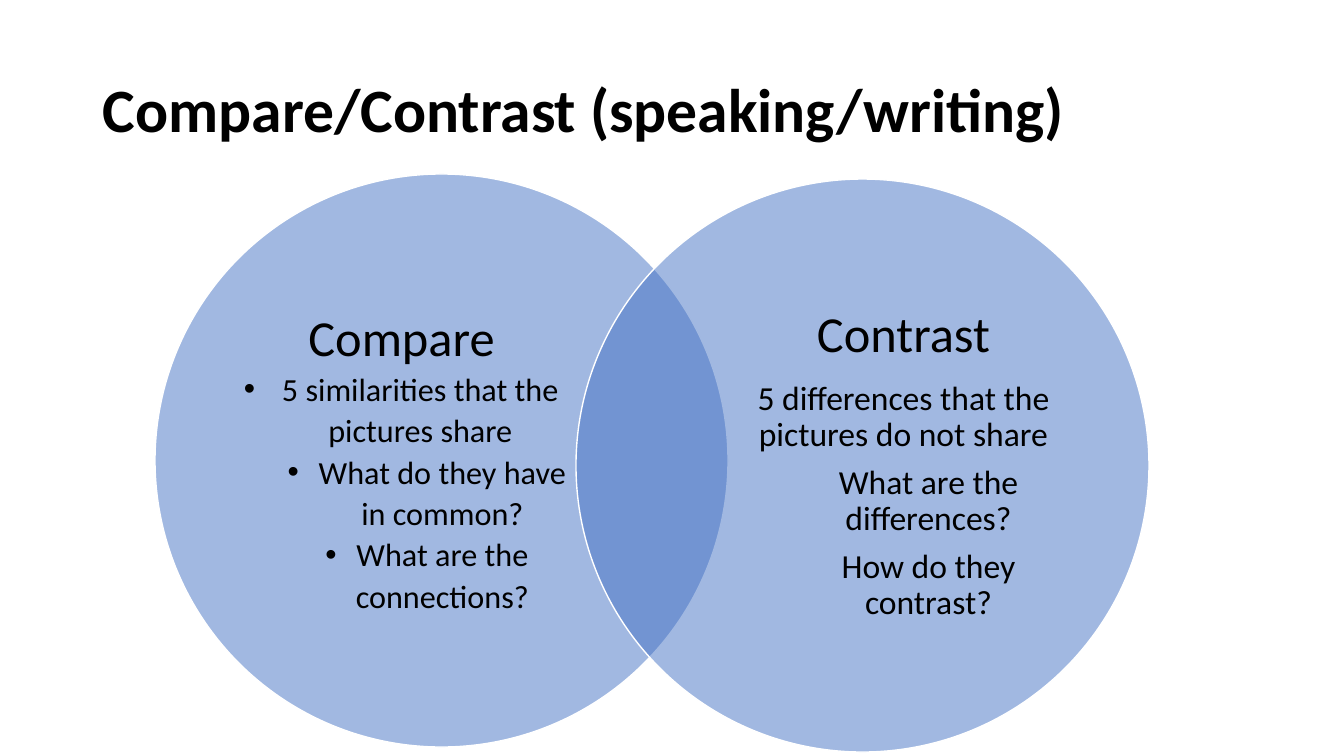
from dataclasses import dataclass

from lxml.etree import SubElement
from pptx import Presentation
from pptx.dml.color import RGBColor as RGB
from pptx.enum.shapes import MSO_SHAPE as Shape
from pptx.enum.text import MSO_ANCHOR as Anchor, PP_ALIGN as Align
from pptx.oxml.ns import qn
from pptx.util import Pt


@dataclass(frozen=True)
class Theme:
    font: str = "Calibri"
    ink: RGB = RGB(0, 0, 0)
    disc: RGB = RGB(0x44, 0x72, 0xC4)
    rim: RGB = RGB(255, 255, 255)
    alpha: int = 50000
    title: int = 44
    head: int = 36
    left: int = 23
    right: int = 24


THEME = Theme()
SCALE = 914400 / 100.8  # EMU in one px

TITLE = "Compare/Contrast (speaking/writing)"
# Each line: text, level, left margin px, hanging indent px
COMPARE = [
    ("5 similarities that the pictures share", 0, 38, 38),
    ("What do they have in common?", 1, 82, 31),
    ("What are the connections?", 1, 82, 31),
]
CONTRAST = [
    ("5 differences that the pictures do not share", 0, 0, 0),
    ("What are the differences?", 1, 50, 0),
    ("How do they contrast?", 1, 50, 0),
]
# Each circle: x, y, text offset, heading, lines, size, line spacings, space after, bullet
CIRCLES = [
    (155, 174, 81, "Compare", COMPARE, THEME.left, (1.0, 1.07), 0, "•"),
    (576, 179, 162, "Contrast", CONTRAST, THEME.right, (0.9, 0.9), 0.35, None),
]
DISC = 573
LABEL_W, LABEL_H = 331, 437


def px(n):
    return round(n * SCALE)


def add_box(slide, x, y, w, h, inset=None):
    box = slide.shapes.add_textbox(px(x), px(y), px(w), px(h))
    frame = box.text_frame
    frame.word_wrap = True
    frame.vertical_anchor = Anchor.MIDDLE
    if inset is not None:
        frame.margin_left = frame.margin_right = px(inset)
        frame.margin_top = frame.margin_bottom = px(inset)
    return frame


def add_text(frame, text, size, bold=False, align=Align.CENTER, spacing=1.0,
             after=0, level=0, margin=0, hang=0, bullet=None):
    para = frame.paragraphs[0]
    if para.runs:
        para = frame.add_paragraph()
    para.level = level
    para.alignment = align
    para.line_spacing = spacing
    para.space_before = Pt(0)
    para.space_after = Pt(size * after)
    props = para._p.get_or_add_pPr()
    props.set("marL", str(px(margin)))
    props.set("indent", str(-px(hang)))
    if bullet:
        SubElement(props, qn("a:buFont")).set("typeface", "Arial")
        SubElement(props, qn("a:buChar")).set("char", bullet)
    else:
        SubElement(props, qn("a:buNone"))
    run = para.add_run()
    run.text = text
    font = run.font
    font.name, font.size, font.bold = THEME.font, Pt(size), bold
    font.color.rgb = THEME.ink


def add_disc(slide, x, y):
    disc = slide.shapes.add_shape(Shape.OVAL, px(x), px(y), px(DISC), px(DISC))
    disc.shadow.inherit = False
    disc.fill.solid()
    disc.fill.fore_color.rgb = THEME.disc
    color = disc._element.spPr.find(qn("a:solidFill"))[0]
    SubElement(color, qn("a:alpha")).set("val", str(THEME.alpha))
    disc.line.color.rgb = THEME.rim
    disc.line.width = Pt(1)


def main():
    deck = Presentation()
    deck.slide_width, deck.slide_height = px(1344), px(756)
    slide = deck.slides.add_slide(deck.slide_layouts[6])

    title = add_box(slide, 93, 40, 1159, 146)
    add_text(title, TITLE, THEME.title, bold=True, align=Align.LEFT, spacing=0.9)

    for x, y, shift, head, lines, size, gaps, after, bullet in CIRCLES:
        add_disc(slide, x, y)
        top = y + (DISC - LABEL_H) // 2
        label = add_box(slide, x + shift, top, LABEL_W, LABEL_H, inset=0)
        add_text(label, head, THEME.head, spacing=gaps[0], after=after)
        for text, level, margin, hang in lines:
            add_text(label, text, size, spacing=gaps[1], after=after,
                     level=level, margin=margin, hang=hang, bullet=bullet)

    deck.save("out.pptx")


if __name__ == "__main__":
    main()
